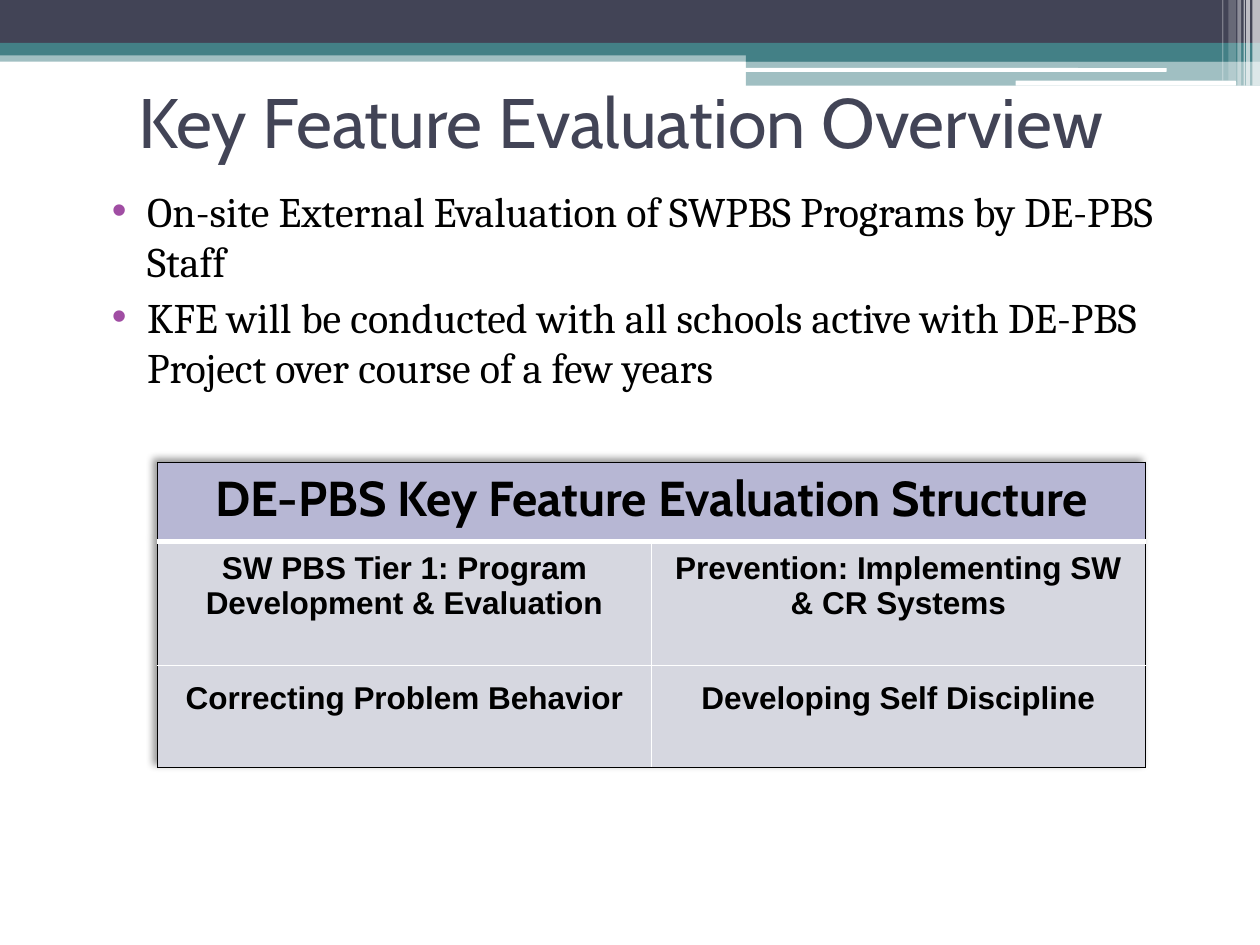
from lxml import etree
from pptx import Presentation
from pptx import util as u
from pptx.dml.color import RGBColor
from pptx.enum import shapes, text
from pptx.oxml import ns

NAVY = RGBColor(0x42, 0x44, 0x56)
TEAL = RGBColor(0x43, 0x80, 0x86)
WHITE = RGBColor(0xFF, 0xFF, 0xFF)
BLACK = RGBColor(0, 0, 0)
PURPLE = RGBColor(0xA0, 0x4D, 0xA3)
LAVENDER = RGBColor(0xB7, 0xB7, 0xD4)
PALE = RGBColor(0xD6, 0xD7, 0xE0)

TITLE = "Key Feature Evaluation Overview"
BULLETS = [
    "On-site External Evaluation of SWPBS Programs by DE-PBS Staff",
    "KFE will be conducted with all schools active with DE-PBS Project over course of a few years",
]
TABLE_HEADING = "DE-PBS Key Feature Evaluation Structure"
TABLE_ROWS = [
    ["SW PBS Tier 1: Program Development & Evaluation", "Prevention: Implementing SW & CR Systems"],
    ["Correcting Problem Behavior", "Developing Self Discipline"],
]
ROW_HEIGHTS = [0.63, 0.95, 0.81]
COLUMN_WIDTH = 3.92

# Header bands: left, top, width, height, colour, opacity in percent
BANDS = [
    (0, 0.4, 10, 0.09, TEAL, 50),
    (0, 0, 10, 0.34, NAVY, 100),
    (0, 0.34, 10, 0.1, TEAL, 100),
    (5.92, 0.39, 4.08, 0.1, TEAL, 100),
    (5.92, 0.48, 4.08, 0.2, TEAL, 50),
]
RULES = [(5.91, 0.54, 3.35, 0.03, WHITE, 100), (8.06, 0.64, 1.75, 0.04, WHITE, 100)]
# Corner stripes: left, width, height, opacity
STRIPES = [
    (9.94, 0.06, 0.68, 65), (9.89, 0.03, 0.68, 65), (9.87, 0.01, 0.68, 60),
    (9.82, 0.03, 0.68, 40), (9.75, 0.06, 0.64, 20), (9.7, 0.01, 0.64, 30),
]


def add_element(parent, tag, **attributes):
    return etree.SubElement(parent, ns.qn(tag), {k: str(v) for k, v in attributes.items()})


def add_bar(slide, kind, left, top, width, height, color, opacity):
    shape = slide.shapes.add_shape(kind, *map(u.Inches, (left, top, width, height)))
    shape.shadow.inherit = False
    shape.fill.solid()
    shape.fill.fore_color.rgb = color
    shape.line.fill.background()
    if opacity < 100:
        color_element = shape._element.spPr.find(".//" + ns.qn("a:srgbClr"))
        add_element(color_element, "a:alpha", val=opacity * 1000)


def write(paragraph, words, name, size, color=BLACK, bold=False):
    run = paragraph.add_run()
    run.text = words
    for key, value in {"name": name, "size": u.Pt(size), "bold": bold}.items():
        setattr(run.font, key, value)
    run.font.color.rgb = color


def add_frame(slide, left, top, width, height, anchor):
    frame = slide.shapes.add_textbox(*map(u.Inches, (left, top, width, height))).text_frame
    frame.word_wrap = True
    frame.vertical_anchor = anchor
    return frame


def add_bullet(paragraph, color):
    properties = paragraph._p.get_or_add_pPr()
    properties.set("marL", str(u.Inches(0.4)))
    properties.set("indent", str(u.Inches(-0.28)))
    add_element(add_element(properties, "a:buClr"), "a:srgbClr", val=color)
    add_element(properties, "a:buFont", typeface="Arial")
    add_element(properties, "a:buChar", char="•")


def style_cell(cell, row, column, fill):
    last_row = len(TABLE_ROWS)
    inner = (WHITE, 1)
    outer = (BLACK, 1)
    thick = (WHITE, 3)
    edges = {
        "a:lnL": inner if column and row else outer,
        "a:lnR": outer if column or not row else inner,
        "a:lnT": (outer, thick, inner)[row],
        "a:lnB": thick if row == 0 else outer if row == last_row else inner,
    }
    properties = cell._tc.get_or_add_tcPr()
    for tag, (color, points) in edges.items():
        line = add_element(properties, tag, w=u.Pt(points))
        add_element(add_element(line, "a:solidFill"), "a:srgbClr", val=color)
    cell.fill.solid()
    cell.fill.fore_color.rgb = fill


def add_structure_table(slide):
    frame = slide.shapes.add_table(
        len(ROW_HEIGHTS), 2, u.Inches(1.25), u.Inches(3.67),
        u.Inches(2 * COLUMN_WIDTH), u.Inches(sum(ROW_HEIGHTS)))
    table = frame.table
    for column in table.columns:
        column.width = u.Inches(COLUMN_WIDTH)
    for row, height in zip(table.rows, ROW_HEIGHTS):
        row.height = u.Inches(height)
    table.cell(0, 0).merge(table.cell(0, 1))

    for r, words_in_row in enumerate([[TABLE_HEADING, ""]] + TABLE_ROWS):
        for c, words in enumerate(words_in_row):
            cell = table.cell(r, c)
            style_cell(cell, r, c, PALE if r else LAVENDER)
            if not words:
                continue
            paragraph = cell.text_frame.paragraphs[0]
            paragraph.alignment = text.PP_ALIGN.CENTER
            name, size = ("Arial", 18) if r else ("Cabin", 28)
            write(paragraph, words, name, size, bold=True)
            if r:
                cell.vertical_anchor = text.MSO_ANCHOR.MIDDLE
                cell.margin_bottom = u.Inches(0.33)

    # Soft shadow towards the upper left
    properties = table._tbl.tblPr
    effects = add_element(properties, "a:effectLst")
    shadow = add_element(effects, "a:outerShdw", blurRad=u.Pt(4), dist=u.Pt(3),
                         dir=13500000, algn="br", rotWithShape=0)
    add_element(add_element(shadow, "a:srgbClr", val=BLACK), "a:alpha", val=40000)
    properties.insert(0, effects)


def main():
    presentation = Presentation()
    presentation.slide_width = u.Inches(10)
    presentation.slide_height = u.Inches(7.5)
    slide = presentation.slides.add_slide(presentation.slide_layouts[6])

    # Header decoration
    for band in BANDS:
        add_bar(slide, shapes.MSO_SHAPE.RECTANGLE, *band)
    for rule in RULES:
        add_bar(slide, shapes.MSO_SHAPE.ROUNDED_RECTANGLE, *rule)
    for left, width, height, opacity in STRIPES:
        add_bar(slide, shapes.MSO_SHAPE.RECTANGLE, left, 0, width, height, WHITE, opacity)

    # Title and bullets
    title = add_frame(slide, 1, 0.33, 8.5, 1.25, text.MSO_ANCHOR.MIDDLE)
    write(title.paragraphs[0], TITLE, "Cabin", 40, NAVY)
    body = add_frame(slide, 0.67, 1.42, 8.83, 5, text.MSO_ANCHOR.TOP)
    for index, words in enumerate(BULLETS):
        paragraph = body.add_paragraph() if index else body.paragraphs[0]
        paragraph.space_before = u.Pt(3)
        add_bullet(paragraph, PURPLE)
        write(paragraph, words, "Cambria", 24)

    add_structure_table(slide)
    presentation.save("out.pptx")


if __name__ == "__main__":
    main()
